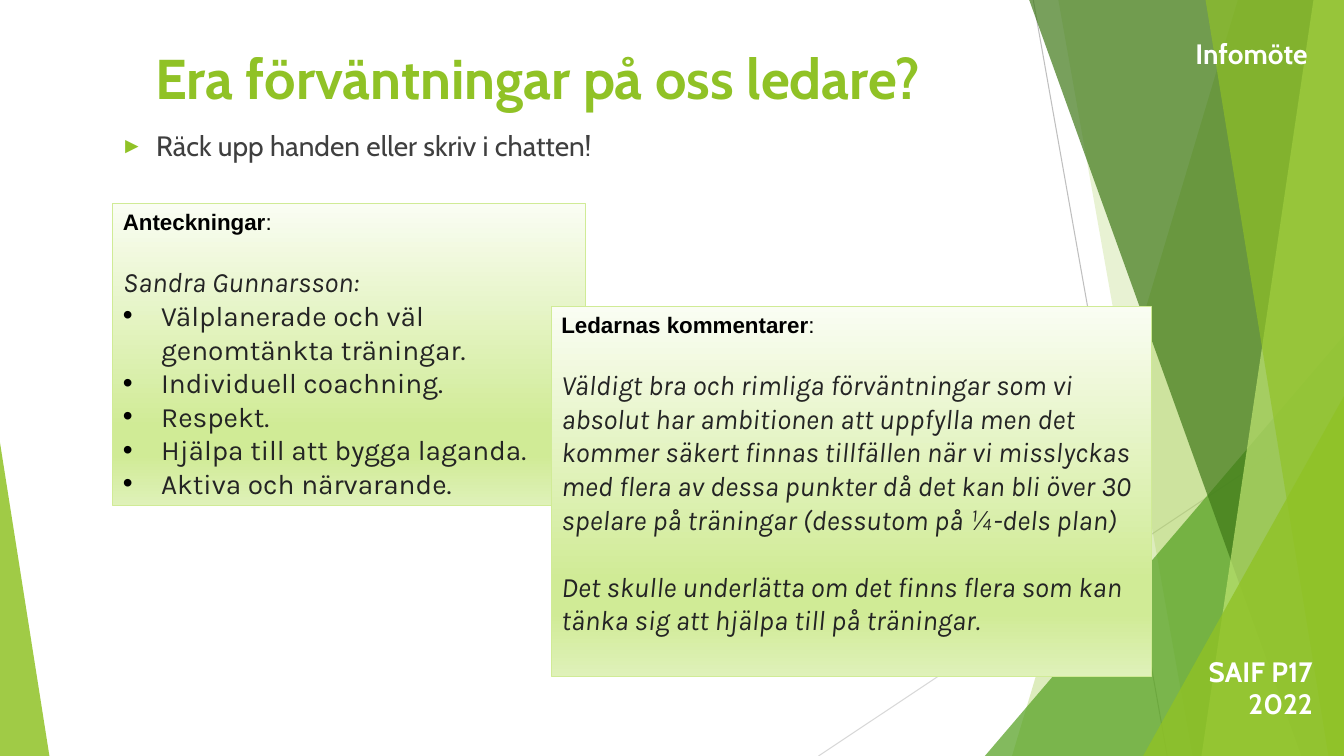
"""Build the slide on expectations of the team leaders."""
import lxml.etree
import pptx
import pptx.dml.color
import pptx.enum.shapes
import pptx.enum.text
import pptx.oxml
import pptx.oxml.ns
import pptx.util

WIDTH, HEIGHT = pptx.util.Inches(13.333), pptx.util.Inches(7.5)
LIME, PALE_LIME = "90C226", "D0EB96"
PANEL_STOPS = [(0, "FAFDF3"), (74, PALE_LIME), (83, PALE_LIME), (100, "DFF1B9")]
ALIGN, ANCHOR = pptx.enum.text.PP_ALIGN, pptx.enum.text.MSO_ANCHOR
SHAPE = pptx.enum.shapes.MSO_SHAPE
Pt = pptx.util.Pt

TAG = {"name": "Cabin", "size": Pt(20), "bold": True, "color": "FFFFFF"}
TITLE = {"name": "Cabin", "size": Pt(40), "bold": True, "color": LIME}
PROMPT = {"name": "Cabin", "size": Pt(20), "color": "3F3F3F"}
HEADING = {"name": "Arial", "size": Pt(16), "bold": True, "color": "000000"}
COLON = HEADING | {"bold": False}
NOTE = {"name": "Karla", "size": Pt(20), "color": "242424"}
QUOTE = NOTE | {"italic": True}
DOT = {"char": "•", "color": "000000", "size": 100, "left": 0.38, "hang": 0.38}
ARROW = {"char": "►", "color": LIME, "size": 80, "left": 0.5, "hang": 0.35}


def across(share):
    return round(WIDTH * share / 100)


def down(share):
    return round(HEIGHT * share / 100)


def place(left, top, width, height):
    return across(left), down(top), across(width), down(height)


def rgb(code):
    return pptx.dml.color.RGBColor.from_string(code)


def apply(target, values):
    for key, value in values.items():
        if key == "color":
            target.color.rgb = rgb(value)
        else:
            setattr(target, key, value)


def add_child(parent, tag, **attributes):
    child = lxml.etree.SubElement(parent, pptx.oxml.ns.qn(tag))
    for key, value in attributes.items():
        child.set(key, str(value))
    return child


def tint(facet, color, opacity):
    facet.shadow.inherit = False
    facet.line.fill.background()
    facet.fill.solid()
    facet.fill.fore_color.rgb = rgb(color)
    solid = facet.fill._xPr.find(pptx.oxml.ns.qn("a:solidFill"))
    add_child(solid[0], "a:alpha", val=opacity * 1000)


def add_band(slide, top_x, bottom_x, color, opacity):
    builder = slide.shapes.build_freeform(across(top_x), 0, scale=1.0)
    corners = [(100, 0), (100, 100), (bottom_x, 100)]
    builder.add_line_segments([(across(x), down(y)) for x, y in corners], close=True)
    tint(builder.convert_to_shape(), color, opacity)


def add_wedge(slide, left, top, width, apex, color, opacity):
    wedge = slide.shapes.add_shape(
        SHAPE.ISOSCELES_TRIANGLE, *place(left, top, width, 100 - top))
    wedge.adjustments[0] = apex
    tint(wedge, color, opacity)


def add_ray(slide, start, end, color):
    ray = slide.shapes.add_connector(
        pptx.enum.shapes.MSO_CONNECTOR.STRAIGHT,
        across(start[0]), down(start[1]), across(end[0]), down(end[1]))
    apply(ray.line, {"color": color, "width": Pt(0.75)})
    add_child(ray._element.spPr, "a:effectLst")


def add_bullet(paragraph, bullet):
    properties = paragraph._p.get_or_add_pPr()
    properties.set("marL", str(pptx.util.Inches(bullet["left"])))
    properties.set("indent", str(-pptx.util.Inches(bullet["hang"])))
    add_child(add_child(properties, "a:buClr"), "a:srgbClr", val=bullet["color"])
    add_child(properties, "a:buSzPct", val=bullet["size"] * 1000)
    add_child(properties, "a:buFont", typeface="Arial")
    add_child(properties, "a:buChar", char=bullet["char"])


def write(frame, paragraphs, align=ALIGN.LEFT, anchor=ANCHOR.TOP, inset=3.6):
    """Fill a frame with (runs, space before, bullet) paragraphs."""
    apply(frame, {"word_wrap": True, "vertical_anchor": anchor,
                  "margin_left": Pt(7.2), "margin_right": Pt(7.2),
                  "margin_top": Pt(inset), "margin_bottom": Pt(inset)})
    for number, (runs, gap, bullet) in enumerate(paragraphs):
        paragraph = frame.add_paragraph() if number else frame.paragraphs[0]
        apply(paragraph, {"alignment": align, "space_before": Pt(gap)})
        if bullet:
            add_bullet(paragraph, bullet)
        for words, style in runs:
            run = paragraph.add_run()
            run.text = words
            apply(run.font, style)


def add_text(slide, area, words, style, gap=0, bullet=None, **layout):
    box = slide.shapes.add_textbox(*place(*area))
    write(box.text_frame, [([(words, style)], gap, bullet)], **layout)


def add_panel(slide, area, heading, paragraphs):
    panel = slide.shapes.add_shape(SHAPE.RECTANGLE, *place(*area))
    panel.shadow.inherit = False
    apply(panel.line, {"color": PALE_LIME, "width": Pt(0.75)})
    panel.fill.gradient()
    panel.fill.gradient_angle = 270
    stops = panel._element.spPr.find(".//" + pptx.oxml.ns.qn("a:gsLst"))
    for stop in list(stops):
        stops.remove(stop)
    for position, color in PANEL_STOPS:
        add_child(add_child(stops, "a:gs", pos=position * 1000), "a:srgbClr", val=color)
    title = ([(heading, HEADING), (":", COLON)], 0, None)
    write(panel.text_frame, [title] + paragraphs)


def add_backdrop(slide):
    add_ray(slide, (76.88, 0), (86.85, 100), "BFBFBF")
    add_ray(slide, (100, 53.73), (60.9, 100), "D8D8D8")
    add_band(slide, 92.1, 75.3, LIME, 30)
    add_band(slide, 78.75, 88.73, LIME, 20)
    add_wedge(slide, 73.28, 44.4, 26.72, 1, "54A021", 72)
    add_band(slide, 76.58, 96.83, "3F7818", 70)
    add_band(slide, 97.73, 89.4, "BFE471", 70)
    add_band(slide, 89.7, 98.85, LIME, 65)
    add_wedge(slide, 85.05, 52.4, 14.95, 1, LIME, 80)
    add_wedge(slide, 0, 58.53, 3.68, 0, LIME, 85)


def main():
    deck = pptx.Presentation()
    apply(deck, {"slide_width": WIDTH, "slide_height": HEIGHT})
    slide = deck.slides.add_slide(deck.slide_layouts[6])
    add_backdrop(slide)

    for words, area in [("SAIF P17", (88.28, 85.2, 10.13, 7.2)),
                        ("2022", (88.28, 89.47, 10.13, 7.2)),
                        ("Infomöte", (83.48, 3.47, 14.55, 7.2))]:
        add_text(slide, area, words, TAG, align=ALIGN.RIGHT, inset=7.2)
    add_text(slide, (2.4, 4.67, 75.23, 10.67), "Era förväntningar på oss ledare?",
             TITLE, align=ALIGN.CENTER, anchor=ANCHOR.BOTTOM)
    add_text(slide, (7.13, 16.4, 72.9, 66.4), "Räck upp handen eller skriv i chatten!",
             PROMPT, gap=10, bullet=ARROW)

    wishes = ["Välplanerade och väl genomtänkta träningar.", "Individuell coachning.",
              "Respekt.", "Hjälpa till att bygga laganda.", "Aktiva och närvarande."]
    add_panel(slide, (8.4, 26.93, 35.18, 40), "Anteckningar",
              [([("Sandra Gunnarsson:", QUOTE)], 21, None)]
              + [([(wish, NOTE)], 0, DOT) for wish in wishes])
    replies = [
        ("Väldigt bra och rimliga förväntningar som vi absolut har ambitionen att "
         "uppfylla men det kommer säkert finnas tillfällen när vi misslyckas med flera "
         "av dessa punkter då det kan bli över 30 spelare på träningar "
         "(dessutom på ¼-dels plan)", 21),
        ("Det skulle underlätta om det finns flera som kan tänka sig att hjälpa till "
         "på träningar.", 24)]
    add_panel(slide, (41.03, 40.53, 44.63, 48.93), "Ledarnas kommentarer",
              [([(reply, QUOTE)], gap, None) for reply, gap in replies])
    deck.save("out.pptx")


if __name__ == "__main__":
    main()
